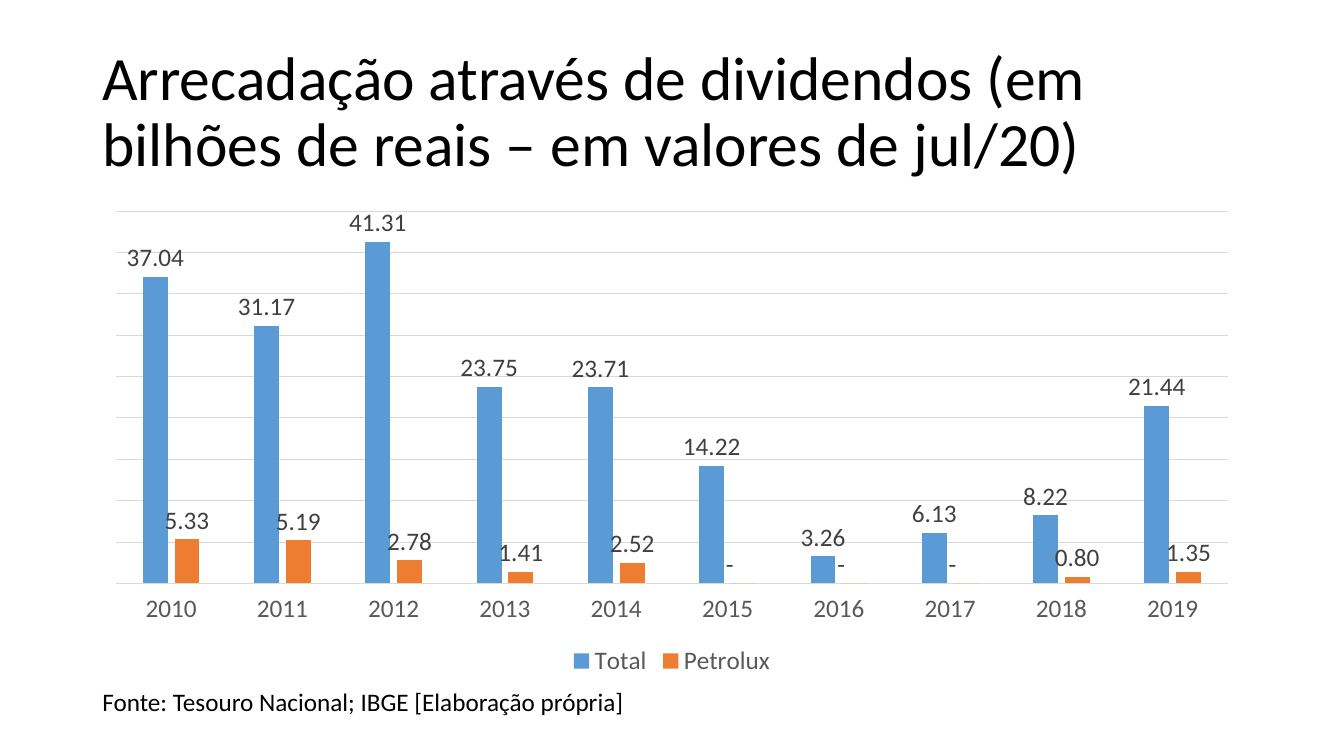
from pptx import Presentation
from pptx.chart.data import CategoryChartData
from pptx.dml.color import RGBColor
from pptx.enum.chart import XL_CHART_TYPE, XL_LABEL_POSITION, XL_LEGEND_POSITION, XL_TICK_LABEL_POSITION, XL_TICK_MARK
from pptx.enum.text import MSO_ANCHOR
from pptx.util import Pt

FONT = "Calibri"
COLORS = {
    "text": "000000",
    "label": "404040",
    "axis": "595959",
    "grid": "D9D9D9",
    "total": "5B9BD5",
    "oil": "ED7D31",
}
NUMBER_FORMAT = '_(* #,##0.00_);_(* \\(#,##0.00\\);_(* "-"??_);_(@_)'
YEARS = [str(year) for year in range(2010, 2020)]
SERIES = [
    ("Total", "total", [37.04, 31.17, 41.31, 23.75, 23.71, 14.22, 3.26, 6.13, 8.22, 21.44]),
    ("Petrolux", "oil", [5.33, 5.19, 2.78, 1.41, 2.52, 0, 0, 0, 0.8, 1.35]),
]
LEFT, WIDTH = 66, 828


def rgb(name):
    """Return a palette colour."""
    return RGBColor.from_string(COLORS[name])


def set_font(font, size, color):
    """Apply the slide typeface with a size and colour."""
    font.name = FONT
    font.size = Pt(size)
    font.color.rgb = rgb(color)


def set_line(line):
    """Apply the thin grey chart line."""
    line.color.rgb = rgb("grid")
    line.width = Pt(0.75)


def add_text(slide, text, top, width, height, size, anchor=MSO_ANCHOR.TOP, wrap=True, spacing=None):
    """Add a single-paragraph text box at the left margin."""
    tf = slide.shapes.add_textbox(Pt(LEFT), Pt(top), Pt(width), Pt(height)).text_frame
    tf.word_wrap = wrap
    tf.vertical_anchor = anchor
    p = tf.paragraphs[0]
    p.text = text
    p.line_spacing = spacing
    set_font(p.font, size, "text")


def style_series(series, color):
    """Colour a series and label its values."""
    series.format.fill.solid()
    series.format.fill.fore_color.rgb = rgb(color)
    series.invert_if_negative = False
    labels = series.data_labels
    labels.show_value = True
    labels.position = XL_LABEL_POSITION.OUTSIDE_END
    labels.number_format = NUMBER_FORMAT
    labels.number_format_is_linked = False
    set_font(labels.font, 18, "label")


def style_axes(chart):
    """Show the years and gridlines, and hide the value scale."""
    years = chart.category_axis
    years.major_tick_mark = XL_TICK_MARK.NONE
    years.tick_label_position = XL_TICK_LABEL_POSITION.LOW
    set_font(years.tick_labels.font, 18, "axis")
    set_line(years.format.line)
    values = chart.value_axis
    values.visible = False
    values.minimum_scale, values.maximum_scale, values.major_unit = 0, 45, 5
    values.has_major_gridlines = True
    set_line(values.major_gridlines.format.line)


def add_dividend_chart(slide, top, height):
    """Add the clustered column chart of dividends by year."""
    data = CategoryChartData(number_format=NUMBER_FORMAT)
    data.categories = YEARS
    for name, _, values in SERIES:
        data.add_series(name, values)
    chart = slide.shapes.add_chart(
        XL_CHART_TYPE.COLUMN_CLUSTERED, Pt(LEFT), Pt(top), Pt(WIDTH), Pt(height), data
    ).chart
    set_font(chart.font, 18, "text")
    chart.has_title = False
    chart.has_legend = True
    chart.legend.position = XL_LEGEND_POSITION.BOTTOM
    chart.legend.include_in_layout = False
    set_font(chart.legend.font, 18, "axis")
    plot = chart.plots[0]
    plot.vary_by_categories = False
    plot.gap_width = 219
    plot.overlap = -27
    for series, (_, color, _) in zip(plot.series, SERIES):
        style_series(series, color)
    style_axes(chart)


def main():
    """Build and save the slide."""
    prs = Presentation()
    prs.slide_width, prs.slide_height = Pt(960), Pt(540)
    slide = prs.slides.add_slide(prs.slide_layouts[6])
    add_text(
        slide, "Arrecadação através de dividendos (em bilhões de reais – em valores de jul/20)",
        28.8, WIDTH, 104.4, 44, anchor=MSO_ANCHOR.MIDDLE, spacing=0.9,
    )
    add_dividend_chart(slide, 144, 342.7)
    add_text(slide, "Fonte: Tesouro Nacional; IBGE [Elaboração própria]", 486.7, 391, 29, 18, wrap=False)
    prs.save("out.pptx")


if __name__ == "__main__":
    main()
